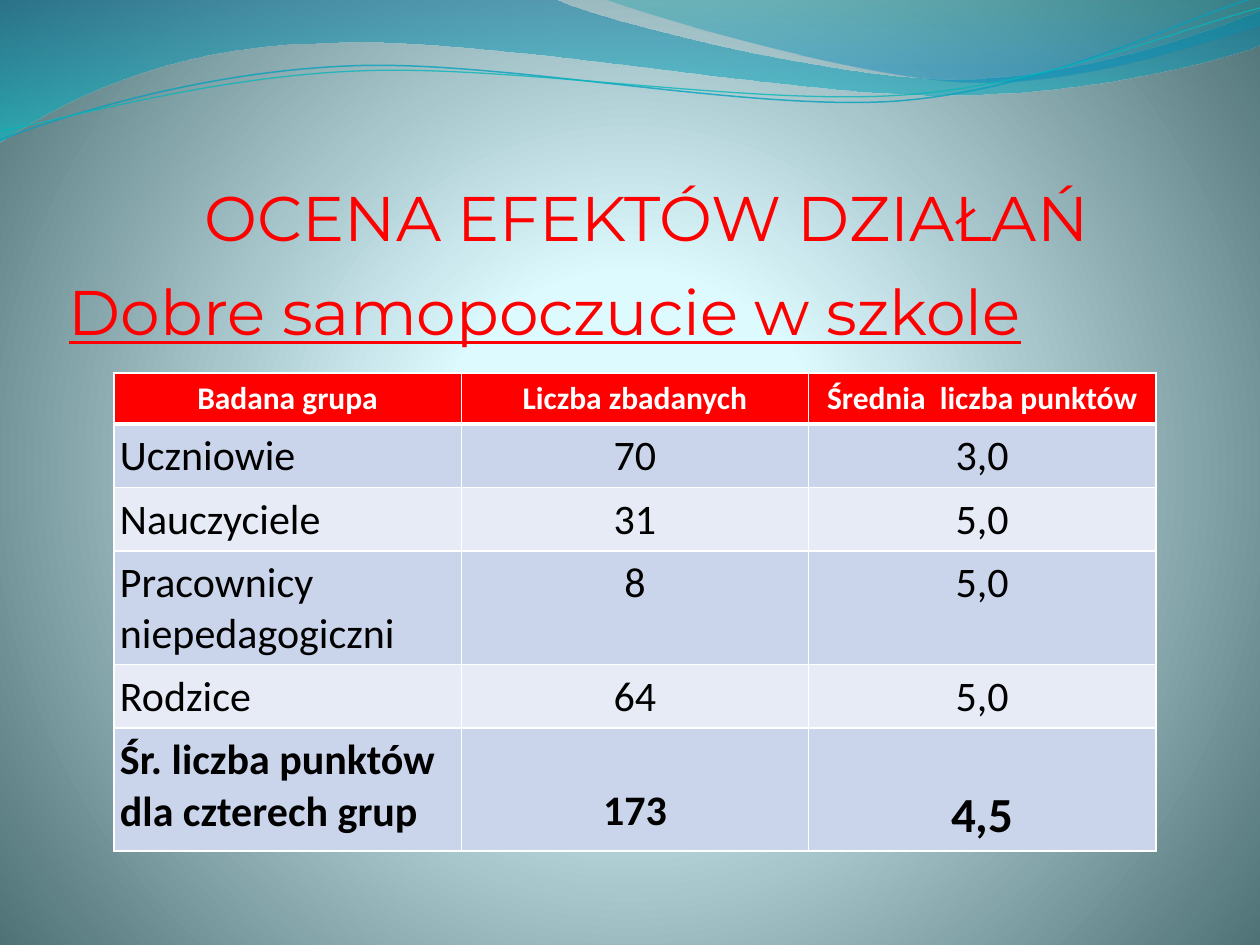
from dataclasses import dataclass
from math import cos, radians, sin

from lxml.etree import SubElement
from pptx import Presentation
from pptx.dml.color import RGBColor
from pptx.enum.text import MSO_ANCHOR, PP_ALIGN
from pptx.oxml import parse_xml
from pptx.oxml.ns import nsdecls, qn
from pptx.util import Pt

PX = 914400 / 126


def emu(px):
    return round(px * PX)


@dataclass(frozen=True)
class Theme:
    red: str = "FF0000"
    white: str = "FFFFFF"
    black: str = "000000"
    bands: tuple = ("CAD4EA", "E6EBF5")
    glow: tuple = ((0, "DEFBFF", 100), (25, "DDFAFF", 100), (100, "4F7277", 100))
    sea: tuple = ((0, "00739E", 45), (100, "00C5CE", 55))
    sky: tuple = ((0, "009FA6", 30), (80, "008ABE", 45))
    blue: str = "05A0BE"
    teal: str = "08B6BA"
    head: str = "Montserrat"
    body: str = "Calibri"
    big: int = 36
    sum: int = 28
    mid: int = 24
    small: int = 18


def write(frame, text, font, size, color, bold=False, under=False, align=PP_ALIGN.LEFT):
    para = frame.paragraphs[0]
    para.alignment = align
    run = para.add_run()
    run.text = text
    style = run.font
    style.name, style.size = font, Pt(size)
    style.bold, style.underline = bold, under
    style.color.rgb = RGBColor.from_string(color)


def pad(box, left, top, right, bottom):
    box.margin_left, box.margin_top = emu(left), emu(top)
    box.margin_right, box.margin_bottom = emu(right), emu(bottom)


def blend(fill, root, stops, radial=False):
    """Give the fill found under root these (percent, colour, opacity) stops."""
    fill.gradient()
    grad = root.find(".//" + qn("a:gradFill"))
    for child in list(grad):
        grad.remove(child)
    items = SubElement(grad, qn("a:gsLst"))
    for place, color, alpha in stops:
        stop = SubElement(items, qn("a:gs"), pos=str(place * 1000))
        tint = SubElement(stop, qn("a:srgbClr"), val=color)
        SubElement(tint, qn("a:alpha"), val=str(alpha * 1000))
    if radial:
        way = SubElement(grad, qn("a:path"), path="circle")
        SubElement(way, qn("a:fillToRect"), l="50000", t="50000", r="50000", b="50000")
    else:
        SubElement(grad, qn("a:lin"), ang="5400000", scaled="0")


def edge(cell, color, widths):
    """Draw the cell's borders, widths in points for left, right, top, bottom."""
    props = cell._tc.get_or_add_tcPr()
    for i, (side, width) in enumerate(zip("LRTB", widths)):
        props.insert(i, parse_xml(
            f'<a:ln{side} {nsdecls("a")} w="{Pt(width)}"><a:solidFill>'
            f'<a:srgbClr val="{color}"/></a:solidFill></a:ln{side}>'))


def spin(points, mid, angle):
    c, s = cos(radians(angle)), sin(radians(angle))
    moved = [(x - mid[0], y - mid[1]) for x, y in points]
    return [(mid[0] + x * c - y * s, mid[1] + x * s + y * c) for x, y in moved]


class Deck:
    def __init__(self, theme):
        self.theme = theme
        self.file = Presentation()
        self.file.slide_width, self.file.slide_height = emu(1260), emu(945)
        self.slide = self.file.slides.add_slide(self.file.slide_layouts[5])

    def back(self, stops):
        blend(self.slide.background.fill, self.slide.element, stops, radial=True)

    def curve(self, start, parts, close, mid=(0, 0), turn=0):
        """Outline of straight (1 point) and cubic (3 points) parts, turned about mid."""
        parts = [[(emu(x), emu(y)) for x, y in spin(part, mid, -turn)] for part in parts]
        first = [emu(v) for v in spin([start], mid, -turn)[0]]
        pen = self.slide.shapes.build_freeform(*first)
        pen.add_line_segments([part[-1] for part in parts], close=close)
        shape = pen.convert_to_shape()
        shape.shadow.inherit = False
        lines = shape.element.findall(".//" + qn("a:lnTo"))
        for line, part in zip(lines, parts):
            if len(part) == 3:
                bend = line.makeelement(qn("a:cubicBezTo"))
                for x, y in part:
                    SubElement(bend, qn("a:pt"), x=str(x - shape.left), y=str(y - shape.top))
                line.getparent().replace(line, bend)
        shape.rotation = turn % 360
        return shape

    def wave(self, start, parts, stops):
        shape = self.curve(start, parts, True)
        blend(shape.fill, shape.element, stops)
        shape.line.fill.background()

    def thread(self, start, parts, mid, color, width):
        shape = self.curve(start, parts, False, mid, -2.7)
        shape.fill.background()
        shape.line.width = Pt(width)
        shape.line.color.rgb = RGBColor.from_string(color)
        tint = shape.line._ln.find(".//" + qn("a:srgbClr"))
        SubElement(tint, qn("a:alpha"), val="78000")

    def title(self, text, x, y, w, h, shift):
        box = self.slide.shapes.title
        box.left, box.top, box.width, box.height = map(emu, (x, y, w, h))
        frame = box.text_frame
        frame.vertical_anchor = MSO_ANCHOR.BOTTOM
        pad(frame, shift, 0, 0, 0)
        look = self.theme
        write(frame, text, look.head, look.big, look.red, align=PP_ALIGN.CENTER)

    def text(self, text, x, y, w, h):
        frame = self.slide.shapes.add_textbox(*map(emu, (x, y, w, h))).text_frame
        frame.word_wrap = True
        pad(frame, 6, 6, 6, 6)
        look = self.theme
        write(frame, text, look.head, look.big, look.red, under=True)

    def table(self, rows, x, y, w, high, drop):
        """Last row holds totals, set lower in its number cells by drop."""
        look, last = self.theme, len(rows) - 1
        size = (len(rows), len(rows[0]))
        grid = self.slide.shapes.add_table(*size, *map(emu, (x, y, w, high * len(rows)))).table
        for r, row in enumerate(rows):
            for c, text in enumerate(row):
                cell = grid.cell(r, c)
                total = r == last
                pad(cell, 6, 7 + (drop if total and c else 0), 6, 6)
                cell.fill.solid()
                shade = look.bands[(r - 1) % 2] if r else look.red
                cell.fill.fore_color.rgb = RGBColor.from_string(shade)
                edge(cell, look.white, (1, 1, 1 if r != 1 else 3, 1 if r else 3))
                points = look.mid if r else look.small
                if total and c == 2:
                    points = look.sum
                write(cell.text_frame, text, look.body, points,
                      look.black if r else look.white, bold=total or r == 0,
                      align=PP_ALIGN.CENTER if c or r == 0 else PP_ALIGN.LEFT)


def main():
    theme = Theme()
    deck = Deck(theme)
    deck.back(theme.glow)
    deck.wave((0, 0), [
        [(554, -1)], [(600, 21), (837, 79), (955, 79)], [(1075, 79), (1207, 33), (1260, 11)],
        [(1261, 45)], [(1239, 55), (1096, 96), (940, 95)], [(784, 95), (481, 35), (324, 43)],
        [(163, 45), (58, 105), (-1, 142)], [(0, 0)]], theme.sea)
    deck.wave((604, -1), [
        [(641, 14), (859, 78), (969, 82)], [(1079, 86), (1211, 40), (1260, 26)],
        [(1260, 0)], [(604, -1)]], theme.sky)
    deck.thread((0, 140), [
        [(60, 117), (199, 72), (349, 66)], [(498, 59), (747, 112), (898, 101)],
        [(1050, 89), (1182, 19), (1257, -3)]], (629, 70), theme.blue, 0.85)
    deck.thread((0, 131), [
        [(59, 121), (207, 77), (357, 71)], [(508, 64), (752, 106), (903, 95)],
        [(1053, 84), (1187, 26), (1260, 8)]], (629, 72), theme.teal, 0.75)
    deck.title("OCENA EFEKTÓW DZIAŁAŃ", 63, 97, 1134, 157, shift=33)
    deck.text("Dobre samopoczucie w szkole", 63, 267, 1134, 605)
    deck.table([
        ("Badana grupa", "Liczba zbadanych", "Średnia  liczba punktów"),
        ("Uczniowie", "70", "3,0"),
        ("Nauczyciele", "31", "5,0"),
        ("Pracownicy niepedagogiczni", "8", "5,0"),
        ("Rodzice", "64", "5,0"),
        ("Śr. liczba punktów dla czterech grup", "173", "4,5"),
    ], 114, 373, 1042, high=51, drop=51)
    deck.file.save("out.pptx")


if __name__ == "__main__":
    main()
